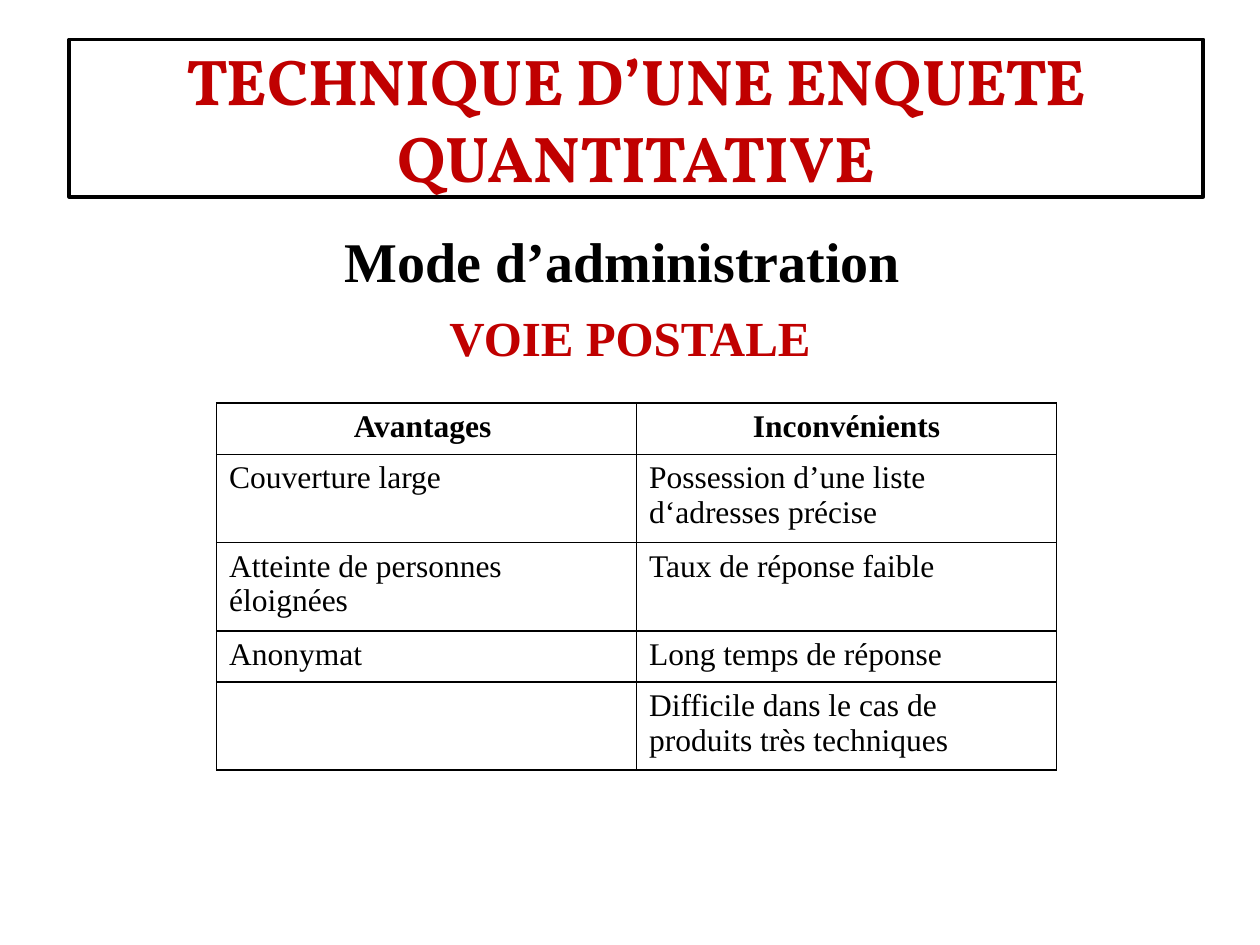
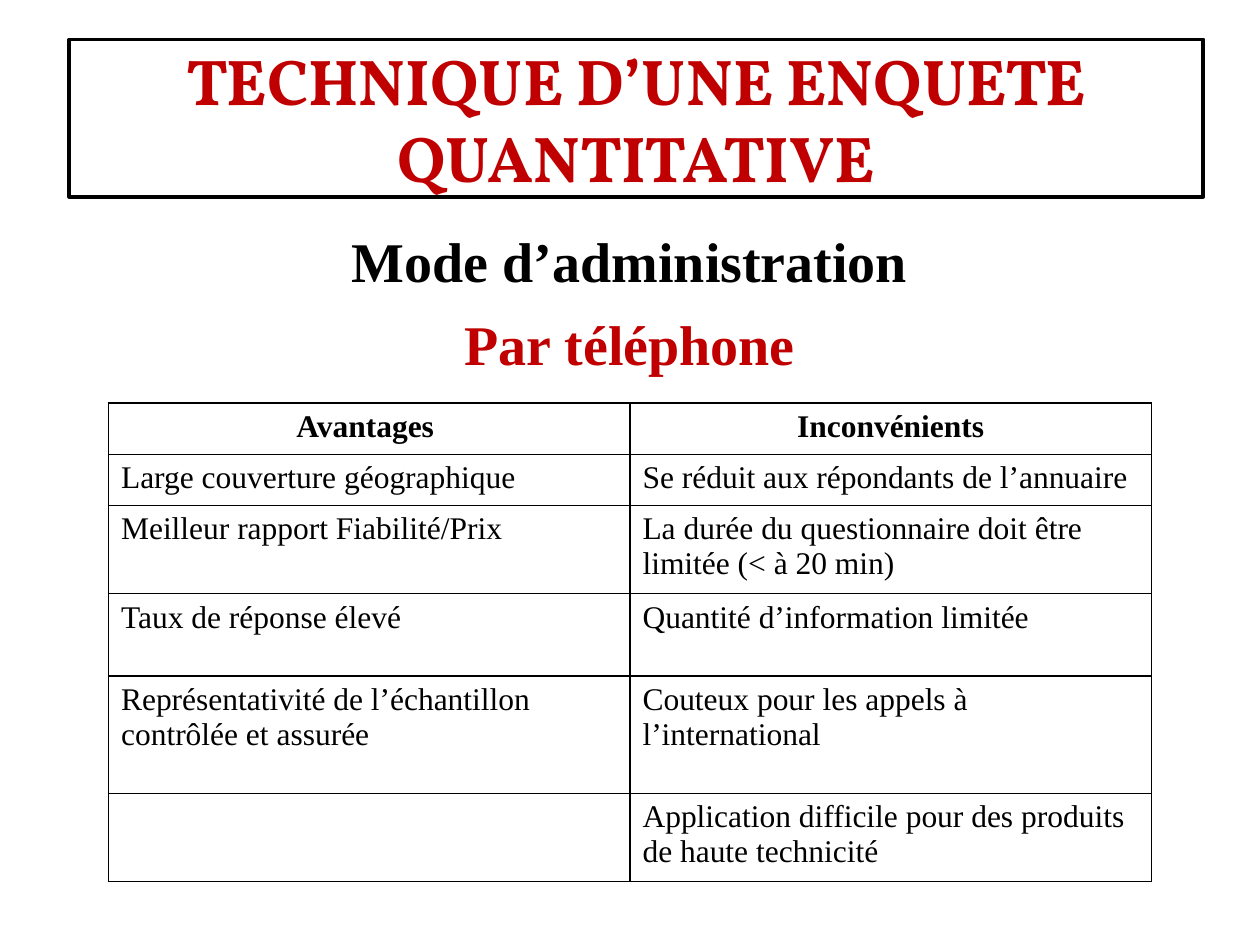
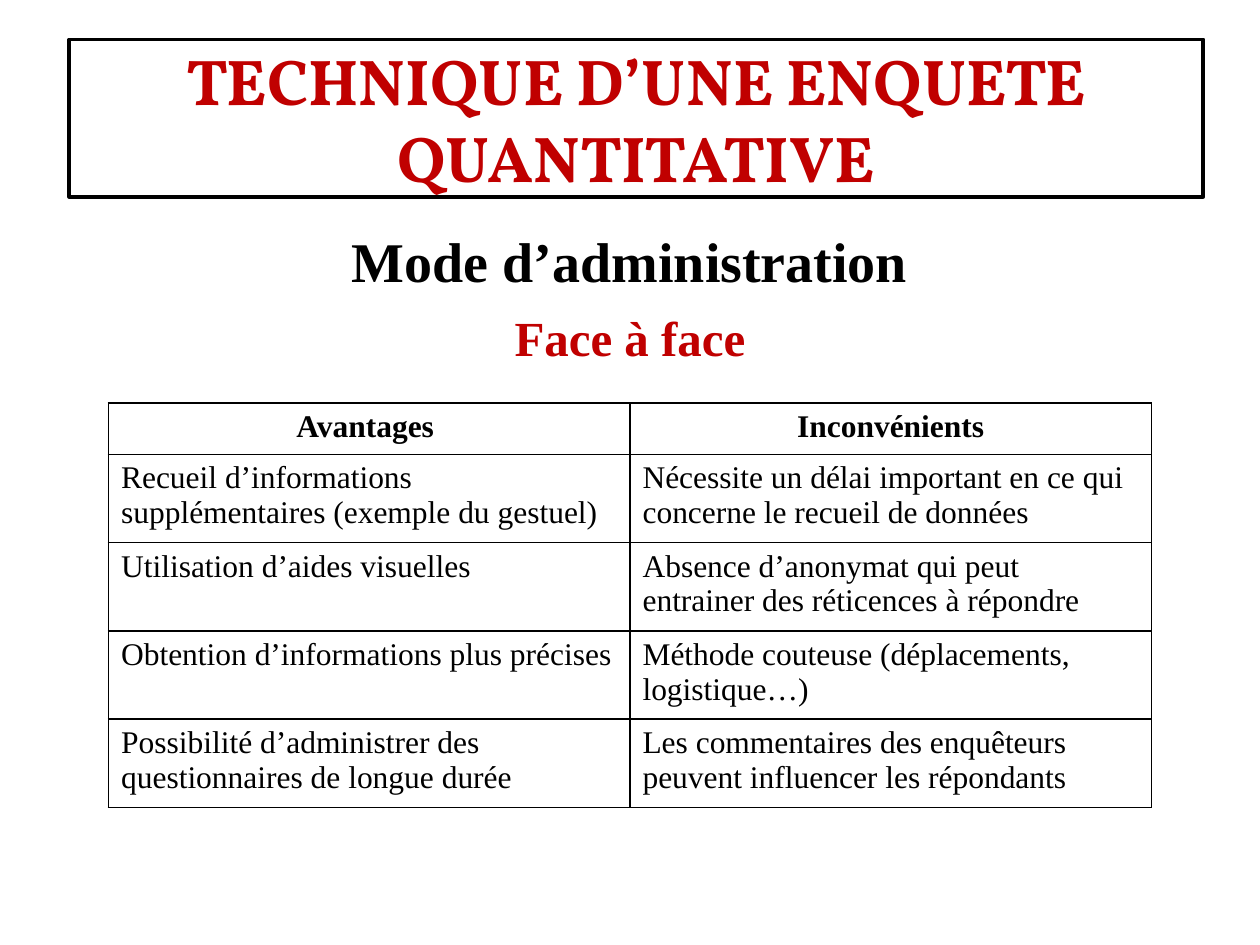
import pptx
import pptx.util
import pptx.dml.color
import pptx.enum.shapes
import pptx.enum.text
import pptx.oxml
import pptx.oxml.ns

Pt = pptx.util.Pt
ALIGN = pptx.enum.text.PP_ALIGN
ANCHOR = pptx.enum.text.MSO_ANCHOR

# Shared style
BLACK, WHITE, RED = "000000", "FFFFFF", "C00000"
BODY_FONT, TITLE_FONT = "Times New Roman", "Vollkorn"
TITLE = "TECHNIQUE D’UNE ENQUETE QUANTITATIVE"
TITLE_BOX = (39.6, 22.5, 648, 90)
HEADING_BOX = (36, 126, 648, 356.4)
TABLE_TOP = 230.4
HEADERS = ("Avantages ", "Inconvénients")
ROW_HEIGHTS = {1: 29.25, 2: 47.06, 3: 67}  # by number of text lines


def color(value):
    return pptx.dml.color.RGBColor.from_string(value)


def style(para, size, ink=BLACK, bold=True, font=BODY_FONT, align=ALIGN.CENTER):
    para.alignment = align
    for span in para.runs:
        span.font.name = font
        span.font.size = Pt(size)
        span.font.bold = bold
        span.font.color.rgb = color(ink)


def add_title(page, box):
    frame = page.shapes.add_shape(
        pptx.enum.shapes.MSO_SHAPE.RECTANGLE, *map(Pt, box))
    frame.shadow.inherit = False
    frame.fill.solid()
    frame.fill.fore_color.rgb = color(WHITE)
    frame.line.color.rgb = color(BLACK)
    frame.line.width = Pt(2)
    frame.text_frame.word_wrap = True
    frame.text_frame.vertical_anchor = ANCHOR.MIDDLE
    frame.text_frame.text = TITLE
    style(frame.text_frame.paragraphs[0], 37, RED, font=TITLE_FONT)


def add_headings(page, box, heading, mode, mode_size):
    text = page.shapes.add_textbox(*map(Pt, box)).text_frame
    text.word_wrap = True
    text.text = f"{heading}\n{mode}"
    first, second = text.paragraphs
    style(first, 32)
    first.space_before = Pt(4)
    style(second, mode_size, RED)
    second.space_before = Pt(mode_size * 0.28)


def add_borders(cell):
    properties = cell._tc.get_or_add_tcPr()
    for index, side in enumerate(("lnL", "lnR", "lnT", "lnB")):
        properties.insert(index, pptx.oxml.parse_xml(
            f'<a:{side} {pptx.oxml.ns.nsdecls("a")} w="12700"><a:solidFill>'
            f'<a:srgbClr val="{BLACK}"/></a:solidFill></a:{side}>'))


def add_comparison(page, left, top, width, rows):
    """Each row holds an advantage, a drawback and its number of text lines."""
    rows = [(*HEADERS, 1), *rows]
    heights = [ROW_HEIGHTS[lines] for *_, lines in rows]
    table = page.shapes.add_table(
        len(rows), 2, Pt(left), Pt(top), Pt(width), Pt(sum(heights))).table
    table.first_row = table.horz_banding = False
    for column in table.columns:
        column.width = Pt(width / 2)
    for index, (*texts, _) in enumerate(rows):
        table.rows[index].height = Pt(heights[index])
        header = index == 0
        for cell, text in zip(table.rows[index].cells, texts):
            cell.text = text
            cell.fill.solid()
            cell.fill.fore_color.rgb = color(WHITE)
            style(cell.text_frame.paragraphs[0], 18, bold=header,
                  align=ALIGN.CENTER if header else ALIGN.LEFT)
            add_borders(cell)


def add_page(deck, heading, mode, mode_size, left, width, rows):
    page = deck.slides.add_slide(deck.slide_layouts[6])
    add_headings(page, HEADING_BOX, heading, mode, mode_size)
    add_title(page, TITLE_BOX)
    add_comparison(page, left, TABLE_TOP, width, rows)


def main():
    deck = pptx.Presentation()
    deck.slide_width, deck.slide_height = Pt(720), Pt(540)

    # Postal survey
    add_page(deck, "Mode d’administration ", "VOIE POSTALE", 28, 123.75, 480, [
        ("Couverture large", "Possession d’une liste d‘adresses précise", 2),
        ("Atteinte de personnes éloignées", "Taux de réponse faible", 2),
        ("Anonymat", "Long temps de réponse", 1),
        ("", "Difficile dans le cas de produits très techniques", 2),
    ])

    # Telephone survey
    add_page(deck, "Mode d’administration", "Par téléphone", 32, 62, 596, [
        ("Large couverture géographique",
         "Se réduit aux répondants de l’annuaire", 1),
        ("Meilleur rapport Fiabilité/Prix",
         "La durée du questionnaire doit être limitée (< à 20 min)", 2),
        ("Taux de réponse élevé", "Quantité d’information limitée", 2),
        ("Représentativité de l’échantillon contrôlée et assurée",
         "Couteux pour les appels à l’international", 3),
        ("", "Application difficile pour des produits de haute technicité", 2),
    ])

    # Face-to-face survey
    add_page(deck, "Mode d’administration", "Face à face", 28, 62, 596, [
        ("Recueil d’informations supplémentaires (exemple du gestuel)",
         "Nécessite un délai important en ce qui concerne le recueil de données",
         2),
        ("Utilisation d’aides visuelles",
         "Absence d’anonymat qui peut entrainer des réticences à répondre", 2),
        ("Obtention d’informations plus précises",
         "Méthode couteuse (déplacements, logistique…)", 2),
        ("Possibilité d’administrer des questionnaires de longue durée",
         "Les commentaires des enquêteurs peuvent influencer les répondants",
         2),
    ])

    deck.save("out.pptx")


if __name__ == "__main__":
    main()
